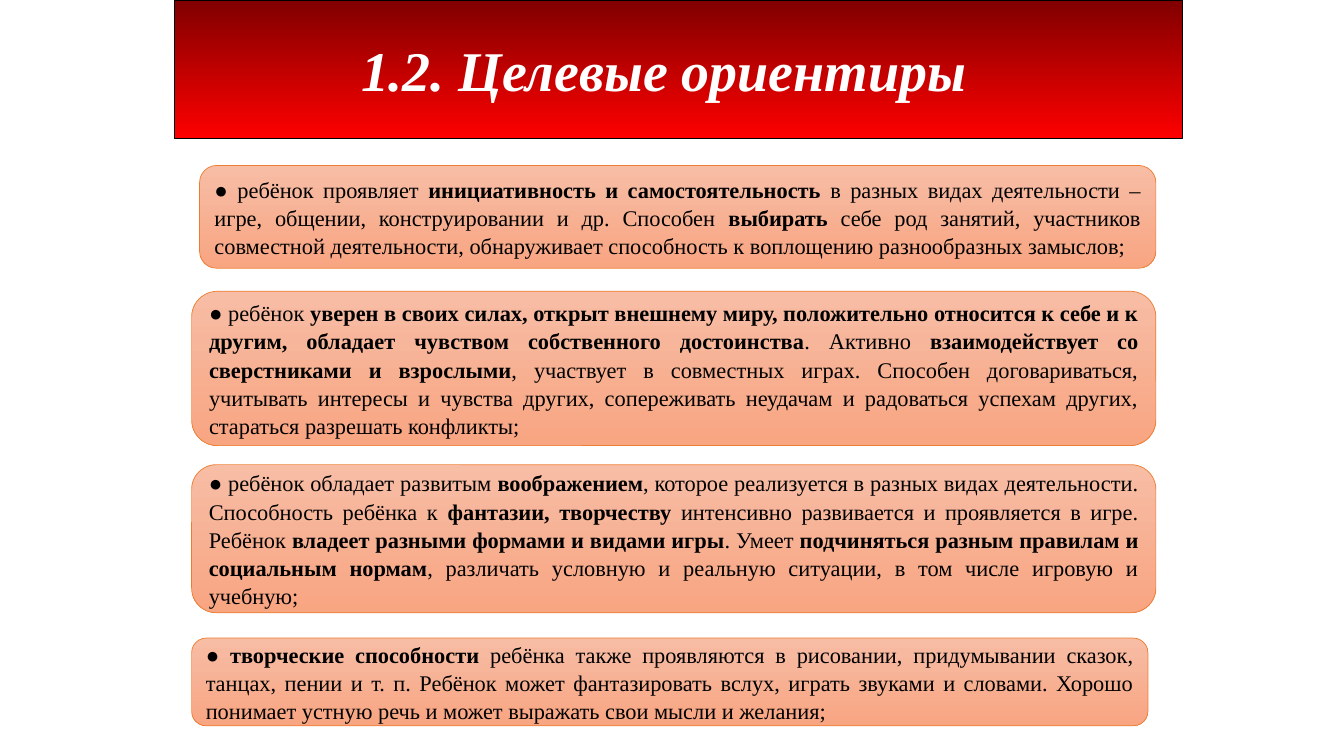
from pptx import Presentation
from pptx.dml.color import RGBColor
from pptx.enum.shapes import MSO_SHAPE
from pptx.enum.text import MSO_ANCHOR, MSO_AUTO_SIZE, PP_ALIGN
from pptx.util import Cm, Pt

ROUNDED = MSO_SHAPE.ROUNDED_RECTANGLE
MIDDLE = MSO_ANCHOR.MIDDLE
NO_AUTOFIT = MSO_AUTO_SIZE.NONE
CENTER, JUSTIFY = PP_ALIGN.CENTER, PP_ALIGN.JUSTIFY

FONT = "Times New Roman"
BLACK = RGBColor(0x00, 0x00, 0x00)
WHITE = RGBColor(0xFF, 0xFF, 0xFF)
DARK_RED = RGBColor(0x80, 0x00, 0x00)
RED = RGBColor(0xFF, 0x00, 0x00)
LIGHT_PEACH = RGBColor(0xF7, 0xBD, 0xA5)
PEACH = RGBColor(0xF8, 0xA5, 0x82)
ORANGE = RGBColor(0xED, 0x7D, 0x31)

# Left, top, width, height in cm; text pieces alternate plain and bold
GOALS = [
    ((5.03, 4.17, 24.1, 2.59), [
        "● ребёнок проявляет ",
        "инициативность и самостоятельность ",
        "в разных видах деятельности – игре, общении, конструировании и др. Способен ",
        "выбирать",
        " себе род занятий, участников совместной деятельности, обнаруживает "
        "способность к воплощению разнообразных замыслов;"]),
    ((4.83, 7.34, 24.3, 3.89), [
        "● ребёнок ",
        "уверен в своих силах, открыт внешнему миру, положительно относится к себе "
        "и к другим, обладает чувством собственного достоинства",
        ". Активно ",
        "взаимодействует со сверстниками и взрослыми",
        ", участвует в совместных играх. Способен договариваться, учитывать интересы "
        "и чувства других, сопереживать неудачам и радоваться успехам других, "
        "стараться разрешать конфликты;"]),
    ((4.83, 11.71, 24.3, 3.73), [
        "● ребёнок обладает развитым ",
        "воображением",
        ", которое реализуется в разных видах деятельности. Способность ребёнка к ",
        "фантазии, творчеству",
        " интенсивно развивается и проявляется в игре. Ребёнок ",
        "владеет разными формами и видами игры",
        ". Умеет ",
        "подчиняться разным правилам и социальным нормам",
        ", различать условную и реальную ситуации, в том числе игровую и учебную;"]),
    ((4.83, 16.08, 24.1, 2.21), [
        "● ",
        "творческие способности ",
        "ребёнка также проявляются в рисовании, придумывании сказок, танцах, пении "
        "и т. п. Ребёнок может фантазировать вслух, играть звуками и словами. Хорошо "
        "понимает устную речь и может выражать свои мысли и желания;"]),
]


def paint(shape, top_color, bottom_color, line_color, line_width):
    """Fill a shape with a downward gradient and outline it."""
    shape.fill.gradient()
    shape.fill.gradient_angle = 270
    for stop, color in zip(shape.fill.gradient_stops, (top_color, bottom_color)):
        stop.color.rgb = color
    shape.line.color.rgb = line_color
    shape.line.width = Pt(line_width)


def add_run(paragraph, text, size, color, bold, italic=False):
    run = paragraph.add_run()
    run.text = text
    font = run.font
    font.name, font.size, font.bold, font.italic = FONT, Pt(size), bold, italic
    font.color.rgb = color


presentation = Presentation()
presentation.slide_width = Cm(33.87)
presentation.slide_height = Cm(19.05)
slide = presentation.slides.add_slide(presentation.slide_layouts[5])

# Title banner
title = slide.shapes.title
title.left, title.top, title.width, title.height = Cm(4.4), Cm(0), Cm(25.4), Cm(3.5)
paint(title, DARK_RED, RED, BLACK, 0.75)
frame = title.text_frame
frame.auto_size = NO_AUTOFIT
frame.vertical_anchor = MIDDLE
frame.margin_right = Cm(1)
frame.paragraphs[0].alignment = CENTER
add_run(frame.paragraphs[0], "1.2. Целевые ориентиры", 40, WHITE, True, True)

# Goal panels
for box, pieces in GOALS:
    panel = slide.shapes.add_shape(ROUNDED, *map(Cm, box))
    panel.shadow.inherit = False
    paint(panel, LIGHT_PEACH, PEACH, ORANGE, 0.5)
    frame = panel.text_frame
    frame.word_wrap = True
    frame.vertical_anchor = MIDDLE
    paragraph = frame.paragraphs[0]
    paragraph.alignment = JUSTIFY
    paragraph.line_spacing = 1.05
    for index, piece in enumerate(pieces):
        add_run(paragraph, piece, 16, BLACK, index % 2 == 1)

presentation.save("out.pptx")
